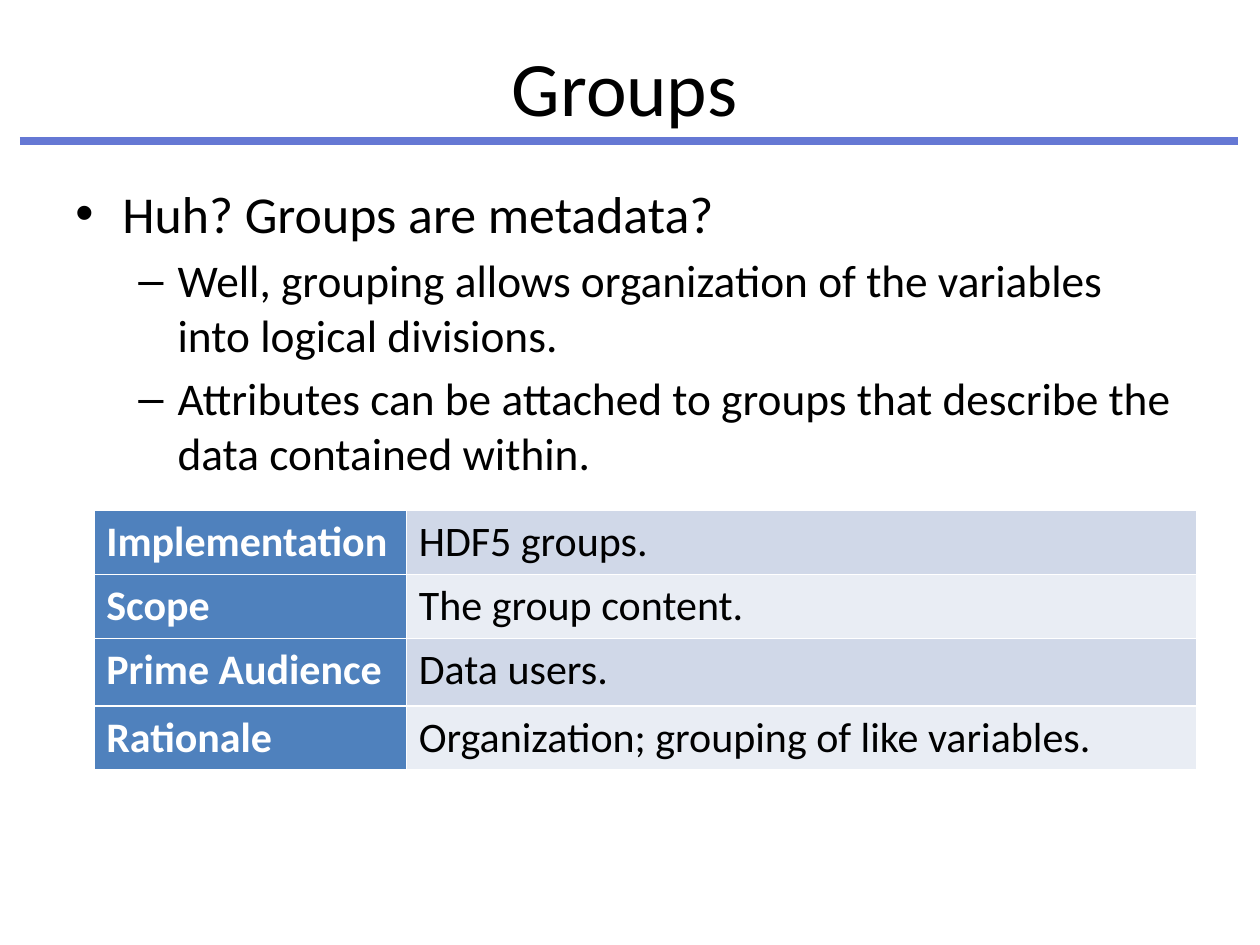
from dataclasses import dataclass
from lxml.etree import SubElement
from pptx import Presentation
from pptx.dml.color import RGBColor as RGB
from pptx.enum.shapes import MSO_CONNECTOR as Connector
from pptx.enum.text import MSO_ANCHOR as Anchor, PP_ALIGN as Align
from pptx.oxml.ns import qn
from pptx.util import Cm, Pt


@dataclass(frozen=True)
class Theme:
    font: str = "Calibri"
    text: RGB = RGB(0x00, 0x00, 0x00)
    label: RGB = RGB(0xFF, 0xFF, 0xFF)
    rule: RGB = RGB(0x65, 0x78, 0xD4)
    label_fill: RGB = RGB(0x4F, 0x81, 0xBD)
    bands: tuple = (RGB(0xD0, 0xD8, 0xE8), RGB(0xE9, 0xED, 0xF4))
    title_size: float = 44
    body_sizes: tuple = (29.6, 25.9)
    table_size: float = 24


theme = Theme()


def add_run(p, text, size, color=theme.text, bold=False):
    r = p.add_run()
    r.text = text
    r.font.color.rgb = color
    for name, value in {"name": theme.font, "size": Pt(size), "bold": bold}.items():
        setattr(r.font, name, value)


prs = Presentation()
prs.slide_width, prs.slide_height = Cm(25.4), Cm(19.05)
s = prs.slides.add_slide(prs.slide_layouts[5])

rule = s.shapes.add_connector(Connector.STRAIGHT, Cm(0.4), Cm(2.84), Cm(24.95), Cm(2.84))
rule.line.color.rgb = theme.rule
rule.line.width = Pt(4.5)
SubElement(rule._element.spPr, qn("a:effectLst"))

title = s.shapes.title
box = {"left": Cm(2.51), "top": Cm(0.13), "width": Cm(20.17), "height": Cm(3.18)}
for name, value in box.items():
    setattr(title, name, value)
tf = title.text_frame
tf.vertical_anchor = Anchor.MIDDLE
p = tf.paragraphs[0]
p.alignment = Align.CENTER
add_run(p, "Groups", theme.title_size)

points = [
    (0, "Huh? Groups are metadata?"),
    (1, "Well, grouping allows organization of the variables into logical divisions."),
    (1, "Attributes can be attached to groups that describe the data contained within."),
]
levels = [("•", Cm(0.95), Cm(-0.95)), ("–", Cm(2.06), Cm(-0.79))]
body = s.shapes.add_textbox(Cm(1.27), Cm(3.53), Cm(22.86), Cm(5.82))
tf = body.text_frame
tf.word_wrap = True
for i, (level, text) in enumerate(points):
    p = tf.add_paragraph() if i else tf.paragraphs[0]
    bullet, margin, indent = levels[level]
    size = theme.body_sizes[level]
    p.level = level
    if i:
        p.space_before = Pt(round(size * 0.2, 1))
    pPr = p._p.get_or_add_pPr()
    pPr.set("marL", str(margin))
    pPr.set("indent", str(indent))
    SubElement(pPr, qn("a:buFont"), typeface="Arial")
    SubElement(pPr, qn("a:buChar"), char=bullet)
    add_run(p, text, size)

rows = [
    ("Implementation", "HDF5 groups."),
    ("Scope", "The group content."),
    ("Prime Audience", "Data users."),
    ("Rationale", "Organization; grouping of like variables."),
]
widths = [Cm(6.3), Cm(15.93)]
heights = [Cm(1.29), Cm(1.29), Cm(1.36), Cm(1.29)]
table = s.shapes.add_table(
    len(rows), len(widths), Cm(1.89), Cm(10.29), sum(widths), sum(heights)
).table
table.first_row = False
for column, width in zip(table.columns, widths):
    column.width = width
for i, (texts, height) in enumerate(zip(rows, heights)):
    table.rows[i].height = height
    styles = [(theme.label_fill, theme.label, True), (theme.bands[i % 2], theme.text, False)]
    for j, (text, (fill, color, bold)) in enumerate(zip(texts, styles)):
        cell = table.cell(i, j)
        cell.fill.solid()
        cell.fill.fore_color.rgb = fill
        add_run(cell.text_frame.paragraphs[0], text, theme.table_size, color, bold)

prs.save("out.pptx")
